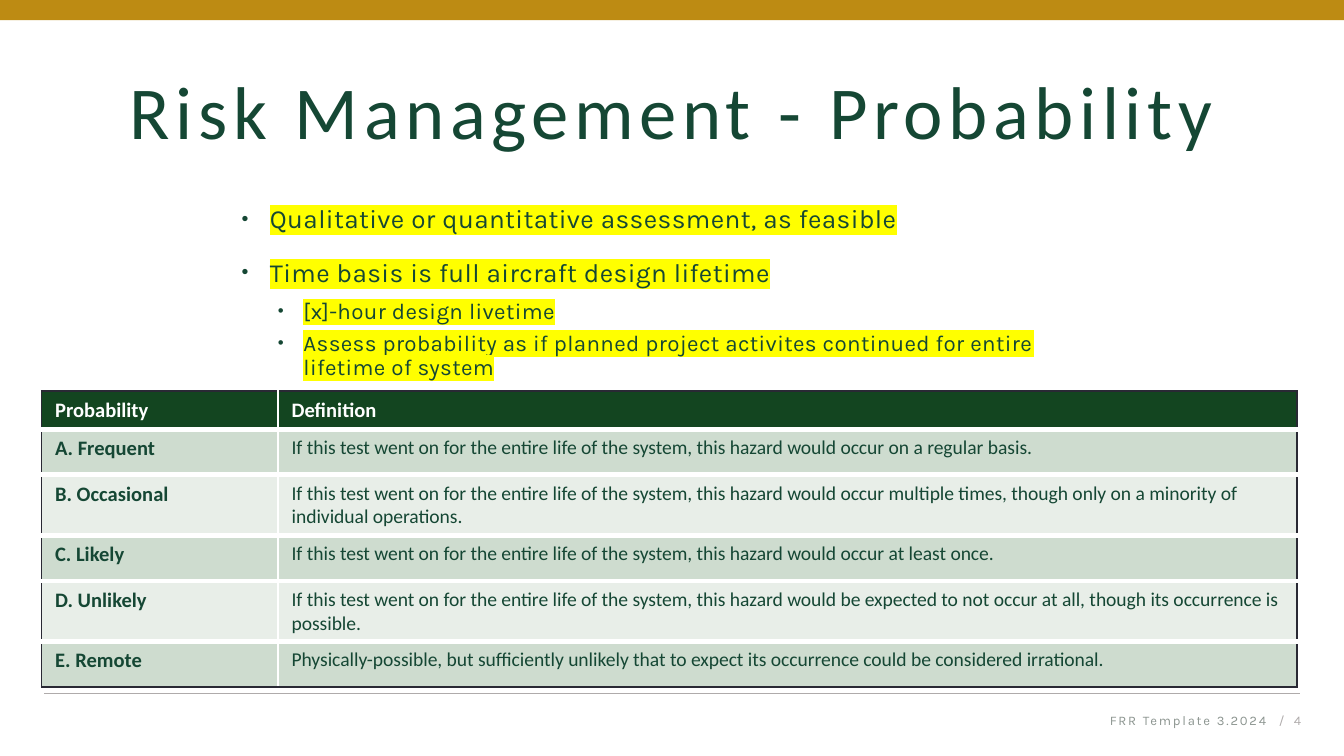
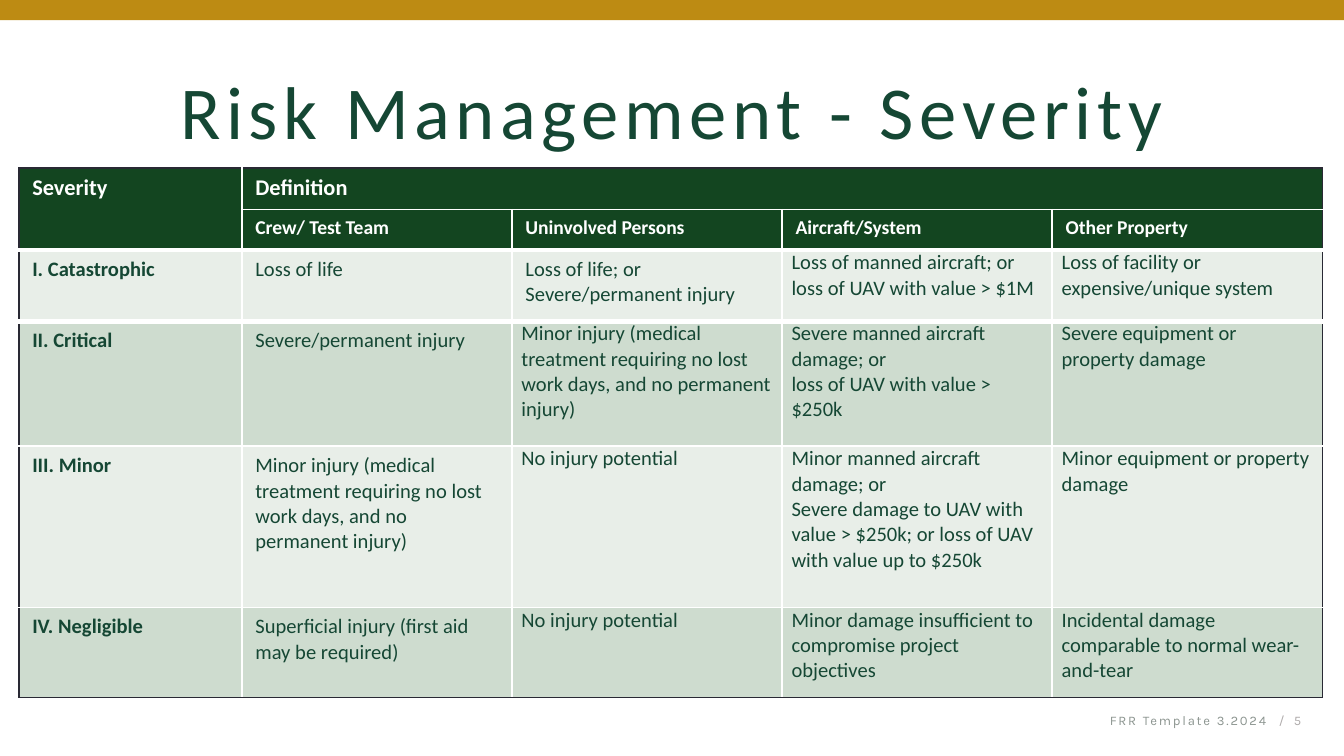
"""Build two risk management slides, one on probability and one on severity."""
from lxml.etree import SubElement
from pptx import Presentation
from pptx.dml.color import RGBColor
from pptx.enum.shapes import MSO_CONNECTOR, MSO_SHAPE
from pptx.enum.text import MSO_ANCHOR, PP_ALIGN
from pptx.oxml.ns import qn
from pptx.util import Inches, Pt

GREEN = RGBColor(0x15, 0x47, 0x34)
DARK = RGBColor(0x13, 0x45, 0x20)
SAGE = RGBColor(0xCE, 0xDC, 0xCF)
PALE = RGBColor(0xE8, 0xEE, 0xE8)
GOLD = RGBColor(0xBD, 0x8B, 0x13)
WHITE = RGBColor(0xFF, 0xFF, 0xFF)
INK = RGBColor(0x29, 0x29, 0x34)
GRAY = RGBColor(0xAF, 0xAB, 0xAB)
MOSS = RGBColor(0x8C, 0x95, 0x90)
GLOW = RGBColor(0xFF, 0xFF, 0x00)

TITLE = {"name": "Calibri", "size": Pt(40)}
SMALL = {"name": "Karla", "size": Pt(7)}

TEST = "If this test went on for the entire life of the system, this hazard would "
HURT = ("Minor injury (medical treatment requiring no lost work days, "
        "and no permanent injury)")

PAGES = [
    {
        "title": "Risk Management - Probability", "num": "4", "heads": 1,
        "at": (0.31, 2.91, 9.34, 2.22), "cols": [1.76, 7.58],
        "rows": [0.27, 0.34, 0.43, 0.34, 0.43, 0.34],
        "rules": [3, 3, 3, 3, 3], "sizes": [11], "body": 10.5,
        "cells": [
            ["Probability", "Definition"],
            ["A. Frequent", TEST + "occur on a regular basis."],
            ["B. Occasional", TEST + "occur multiple times, though only on a "
             "minority of individual operations."],
            ["C. Likely", TEST + "occur at least once."],
            ["D. Unlikely", TEST + "be expected to not occur at all, though its "
             "occurrence is possible."],
            ["E. Remote", "Physically-possible, but sufficiently unlikely that to "
             "expect its occurrence could be considered irrational."],
        ],
    },
    {
        "title": "Risk Management - Severity", "num": "5", "heads": 2,
        "at": (0.14, 1.25, 9.71, 3.92), "cols": [1.66] + [2.01] * 4,
        "rows": [0.31, 0.29, 0.53, 0.93, 1.2, 0.67],
        "rules": [1, 3, 3, 1, 1], "sizes": [12, 10.5], "body": 11,
        "cells": [
            ["Severity", "Definition", "", "", ""],
            ["", "Crew/ Test Team", "Uninvolved Persons", "Aircraft/System",
             "Other Property"],
            ["I. Catastrophic", "Loss of life",
             "Loss of life; or\nSevere/permanent injury",
             "Loss of manned aircraft; or\nloss of UAV with value > $1M",
             "Loss of facility or expensive/unique system"],
            ["II. Critical", "Severe/permanent injury", HURT,
             "Severe manned aircraft damage; or\nloss of UAV with value > $250k",
             "Severe equipment or property damage"],
            ["III. Minor", HURT, "No injury potential",
             "Minor manned aircraft damage; or\nSevere damage to UAV with value "
             "> $250k; or loss of UAV with value up to $250k",
             "Minor equipment or property damage"],
            ["IV. Negligible", "Superficial injury (first aid may be required)",
             "No injury potential",
             "Minor damage insufficient to compromise project objectives",
             "Incidental damage comparable to normal wear-and-tear"],
        ],
    },
]

TOP = {"line_spacing": Pt(18.2), "space_before": Pt(7.5), "space_after": Pt(3)}
SUB = {"line_spacing": 0.9, "space_before": Pt(3.8), "level": 1}
NOTES = [
    ("Qualitative or quantitative assessment, as feasible",
     14, 0.31, 0.21, TOP | {"space_before": Pt(0)}),
    ("Time basis is full aircraft design lifetime", 14, 0.31, 0.21, TOP),
    ("[x]-hour design livetime", 12, 0.56, 0.19, SUB),
    ("Assess probability as if planned project activites continued for entire "
     "lifetime of system", 12, 0.56, 0.19, SUB),
]


def write(para, text, style, color, space=0):
    """Add a run with its font values, colour and letter spacing."""
    run = para.add_run()
    run.text = text
    for key, value in style.items():
        setattr(run.font, key, value)
    run.font.color.rgb = color
    if space:
        run.font._element.set("spc", str(round(space * 100)))
    return run


def frame(slide, at, align=PP_ALIGN.LEFT, anchor=MSO_ANCHOR.MIDDLE):
    """Add a wrapping text box and return its text frame."""
    text = slide.shapes.add_textbox(*map(Inches, at)).text_frame
    text.word_wrap = True
    text.vertical_anchor = anchor
    text.paragraphs[0].alignment = align
    return text


deck = Presentation()
deck.slide_width = Inches(10)
deck.slide_height = deck.slide_width * 9 // 16

for page in PAGES:
    slide = deck.slides.add_slide(deck.slide_layouts[6])

    line = slide.shapes.add_connector(
        MSO_CONNECTOR.STRAIGHT, *map(Inches, (0.33, 5.16, 9.67, 5.16)))
    line.line.color.rgb = GRAY
    line.line.width = Pt(0.5)
    SubElement(line._element.spPr, qn("a:effectLst"))

    band = slide.shapes.add_shape(
        MSO_SHAPE.RECTANGLE, *map(Inches, (0, 0, 10, 0.15)))
    band.shadow.inherit = False
    band.fill.solid()
    band.fill.fore_color.rgb = GOLD
    band.line.fill.background()

    head = frame(slide, (0.69, 0.6, 8.62, 0.51), PP_ALIGN.CENTER).paragraphs[0]
    head.line_spacing = 0.9
    write(head, page["title"], TITLE, GREEN, 3)

    foot = frame(slide, (6.14, 5.21, 3.38, 0.3), PP_ALIGN.RIGHT).paragraphs[0]
    write(foot, "FRR Template 3.2024", SMALL, MOSS, 1)
    mark = frame(slide, (9.33, 5.21, 0.45, 0.3), PP_ALIGN.RIGHT).paragraphs[0]
    write(mark, "/ ", SMALL, GRAY, 1.7)
    write(mark, page["num"], SMALL, GRAY)

    cells, heads = page["cells"], page["heads"]
    high, wide = len(page["rows"]), len(page["cols"])
    table = slide.shapes.add_table(high, wide, *map(Inches, page["at"])).table
    table.first_row = table.horz_banding = False
    for col, width in zip(table.columns, page["cols"]):
        col.width = Inches(width)
    for row, height in zip(table.rows, page["rows"]):
        row.height = Inches(height)
    if heads == 2:
        table.cell(0, 0).merge(table.cell(1, 0))
        table.cell(0, 1).merge(table.cell(0, 4))

    for r, texts in enumerate(cells):
        for c, text in enumerate(texts):
            cell = table.cell(r, c)
            low, right = r + cell.span_height, c + cell.span_width
            edges = {
                "L": (1, INK if c == 0 else WHITE),
                "R": (1, INK if right == wide else WHITE),
                "T": (1, INK) if r == 0 else (page["rules"][r - 1], WHITE),
                "B": (1, INK) if low == high else (page["rules"][low - 1], WHITE),
            }
            props = cell._tc.get_or_add_tcPr()
            for side, (width, color) in edges.items():
                edge = SubElement(props, qn("a:ln" + side), w=str(Pt(width)))
                fill = SubElement(edge, qn("a:solidFill"))
                SubElement(fill, qn("a:srgbClr"), val=str(color))
            cell.fill.solid()
            cell.fill.fore_color.rgb = (
                DARK if r < heads else SAGE if r % 2 else PALE)
            if heads == 2 and r > 1 and c > 1 and (r, c) != (2, 2):
                cell.margin_left = cell.margin_right = Inches(0.07)
                cell.margin_top = cell.margin_bottom = 0
            if not text:
                continue
            bold = r < heads or c == 0
            size = page["sizes"][r] if r < heads else 11 if c == 0 else page["body"]
            style = {"name": "Calibri", "size": Pt(size), "bold": bold}
            for i, part in enumerate(text.split("\n")):
                body = cell.text_frame
                para = body.add_paragraph() if i else body.paragraphs[0]
                write(para, part, style, WHITE if r < heads else GREEN)

notes = frame(deck.slides[0], (1.6, 1.44, 6.4, 3.33), anchor=MSO_ANCHOR.TOP)
for i, (text, size, left, hang, form) in enumerate(NOTES):
    para = notes.add_paragraph() if i else notes.paragraphs[0]
    props = para._p.get_or_add_pPr()
    props.set("marL", str(Inches(left)))
    props.set("indent", str(-Inches(hang)))
    SubElement(props, qn("a:buSzPct"), val="75000")
    SubElement(props, qn("a:buFont"), typeface="Arial")
    SubElement(props, qn("a:buChar"), char="•")
    for key, value in form.items():
        setattr(para, key, value)
    run = write(para, text, {"name": "Karla", "size": Pt(size)}, GREEN, 0.2)
    fill = run.font._element.find(qn("a:solidFill"))
    glow = SubElement(run.font._element, qn("a:highlight"))
    SubElement(glow, qn("a:srgbClr"), val=str(GLOW))
    fill.addnext(glow)

deck.save("out.pptx")
